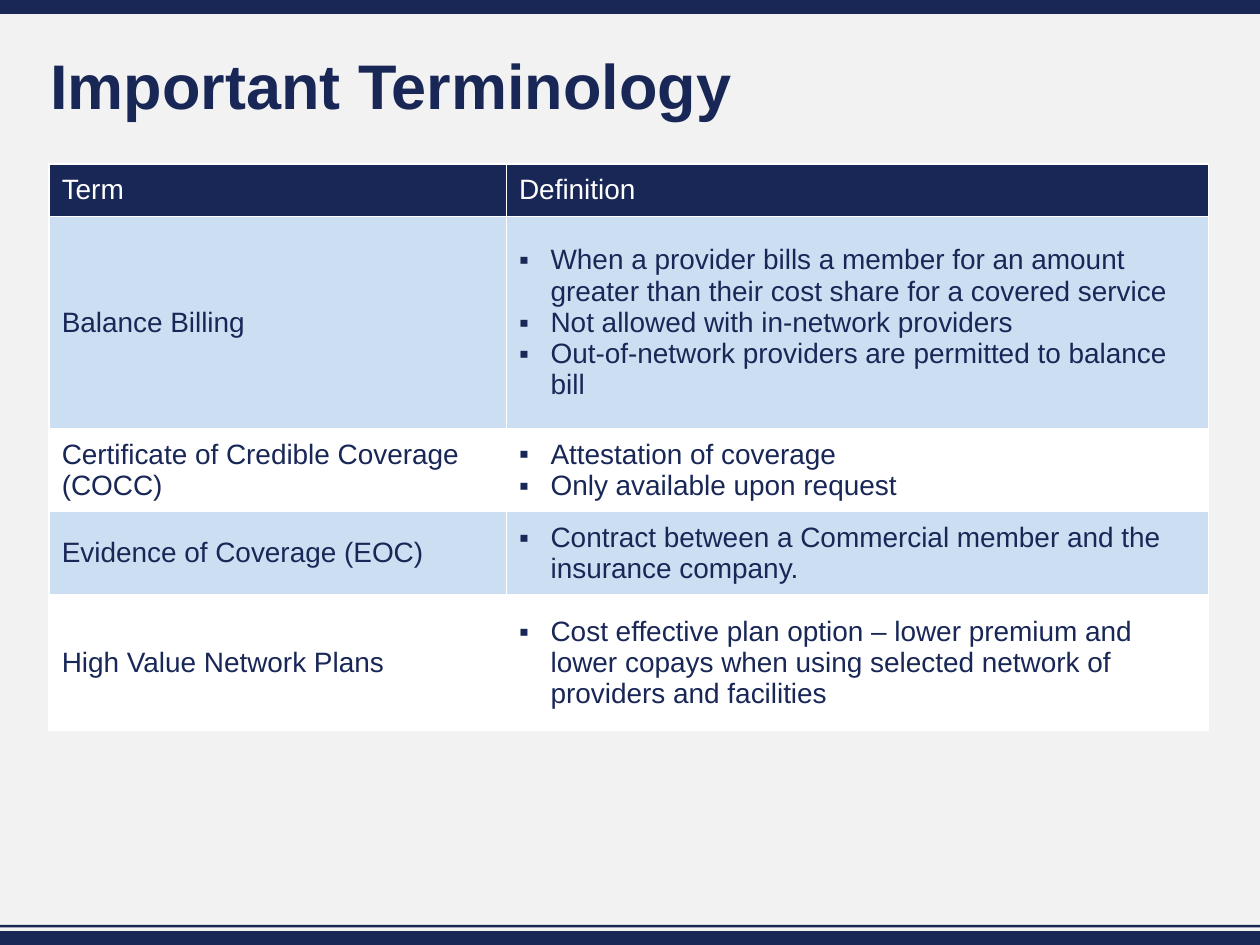
from dataclasses import dataclass

from lxml import etree
from pptx import Presentation
from pptx.dml.color import RGBColor
from pptx.enum import shapes, text
from pptx.oxml import ns
from pptx.util import Inches, Pt


@dataclass(frozen=True)
class Theme:
    font: str = "Arial"
    navy: RGBColor = RGBColor(0x19, 0x27, 0x57)
    header: RGBColor = RGBColor(0x19, 0x27, 0x56)
    band: RGBColor = RGBColor(0xCC, 0xDF, 0xF2)
    white: RGBColor = RGBColor(0xFF, 0xFF, 0xFF)
    page: RGBColor = RGBColor(0xF2, 0xF2, 0xF2)
    title_size: int = 36
    table_size: int = 16


THEME = Theme()

# Top, height of each full-width bar
BARS = [(0, 0.11), (7.39, 0.11), (7.34, 0.02)]

COLUMN_WIDTHS = [3.63, 5.57]
HEADINGS = ["Term", "Definition"]
HEADING_HEIGHT = 0.42

# Row height, term, definition points
TERMS = [
    (1.68, "Balance Billing", [
        "When a provider bills a member for an amount greater than "
        "their cost share for a covered service",
        "Not allowed with in-network providers",
        "Out-of-network providers are permitted to balance bill",
    ]),
    (0.66, "Certificate of Credible Coverage (COCC)", [
        "Attestation of coverage",
        "Only available upon request",
    ]),
    (0.66, "Evidence of Coverage (EOC)", [
        "Contract between a Commercial member and the insurance company.",
    ]),
    (1.08, "High Value Network Plans", [
        "Cost effective plan option – lower premium and lower copays when "
        "using selected network of providers and facilities",
    ]),
]


def format_font(font, size, color, bold=False):
    formats = {"name": THEME.font, "size": Pt(size), "bold": bold}
    for name, value in formats.items():
        setattr(font, name, value)
    font.color.rgb = color


def add_bar(slide, top, height):
    bar = slide.shapes.add_shape(
        shapes.MSO_SHAPE.RECTANGLE,
        Inches(0), Inches(top), Inches(10), Inches(height))
    bar.shadow.inherit = False
    bar.fill.solid()
    bar.fill.fore_color.rgb = THEME.navy
    bar.line.fill.background()


def place_title(slide, wording):
    title = slide.shapes.title
    box = {"left": 0.4, "top": 0.4, "width": 9.2, "height": 0.62}
    for name, value in box.items():
        setattr(title, name, Inches(value))
    frame = title.text_frame
    frame.text = wording
    formats = {
        "margin_left": 0, "margin_top": 0, "margin_right": 0,
        "margin_bottom": 0, "word_wrap": True,
        "auto_size": text.MSO_AUTO_SIZE.NONE,
        "vertical_anchor": text.MSO_ANCHOR.MIDDLE,
    }
    for name, value in formats.items():
        setattr(frame, name, value)
    heading = frame.paragraphs[0]
    heading.alignment = text.PP_ALIGN.LEFT
    heading.line_spacing = 0.9
    format_font(heading.runs[0].font, THEME.title_size, THEME.navy, bold=True)


def add_bullet(paragraph):
    properties = paragraph._p.get_or_add_pPr()
    indent = Inches(0.25)
    properties.set("marL", str(indent))
    properties.set("indent", str(-indent))
    font = etree.SubElement(properties, ns.qn("a:buFont"))
    font.set("typeface", THEME.font)
    bullet = etree.SubElement(properties, ns.qn("a:buChar"))
    bullet.set("char", "▪")


def fill_cell(cell, lines, fill, color, bulleted=False):
    cell.fill.solid()
    cell.fill.fore_color.rgb = fill
    cell.vertical_anchor = text.MSO_ANCHOR.MIDDLE
    cell.text_frame.text = "\n".join(lines)
    for paragraph in cell.text_frame.paragraphs:
        if bulleted:
            add_bullet(paragraph)
        format_font(paragraph.runs[0].font, THEME.table_size, color)


def add_terms_table(slide):
    heights = [HEADING_HEIGHT] + [height for height, _, _ in TERMS]
    terms_table = slide.shapes.add_table(
        len(heights), len(COLUMN_WIDTHS), Inches(0.39), Inches(1.3),
        Inches(sum(COLUMN_WIDTHS)), Inches(sum(heights))).table
    for column, width in zip(terms_table.columns, COLUMN_WIDTHS):
        column.width = Inches(width)
    for row, height in zip(terms_table.rows, heights):
        row.height = Inches(height)

    # Heading row
    for column, heading in enumerate(HEADINGS):
        fill_cell(terms_table.cell(0, column), [heading],
                  THEME.header, THEME.white)

    # Term rows in alternating bands
    for row, (_, term, points) in enumerate(TERMS, start=1):
        fill = THEME.band if row % 2 else THEME.white
        fill_cell(terms_table.cell(row, 0), [term], fill, THEME.navy)
        fill_cell(terms_table.cell(row, 1), points, fill, THEME.navy,
                  bulleted=True)


def main():
    deck = Presentation()
    deck.slide_width, deck.slide_height = Inches(10), Inches(7.5)
    slide = deck.slides.add_slide(deck.slide_layouts[5])

    # Background and bars
    slide.background.fill.solid()
    slide.background.fill.fore_color.rgb = THEME.page
    for top, height in BARS:
        add_bar(slide, top, height)

    # Content
    place_title(slide, "Important Terminology")
    add_terms_table(slide)
    deck.save("out.pptx")


if __name__ == "__main__":
    main()
